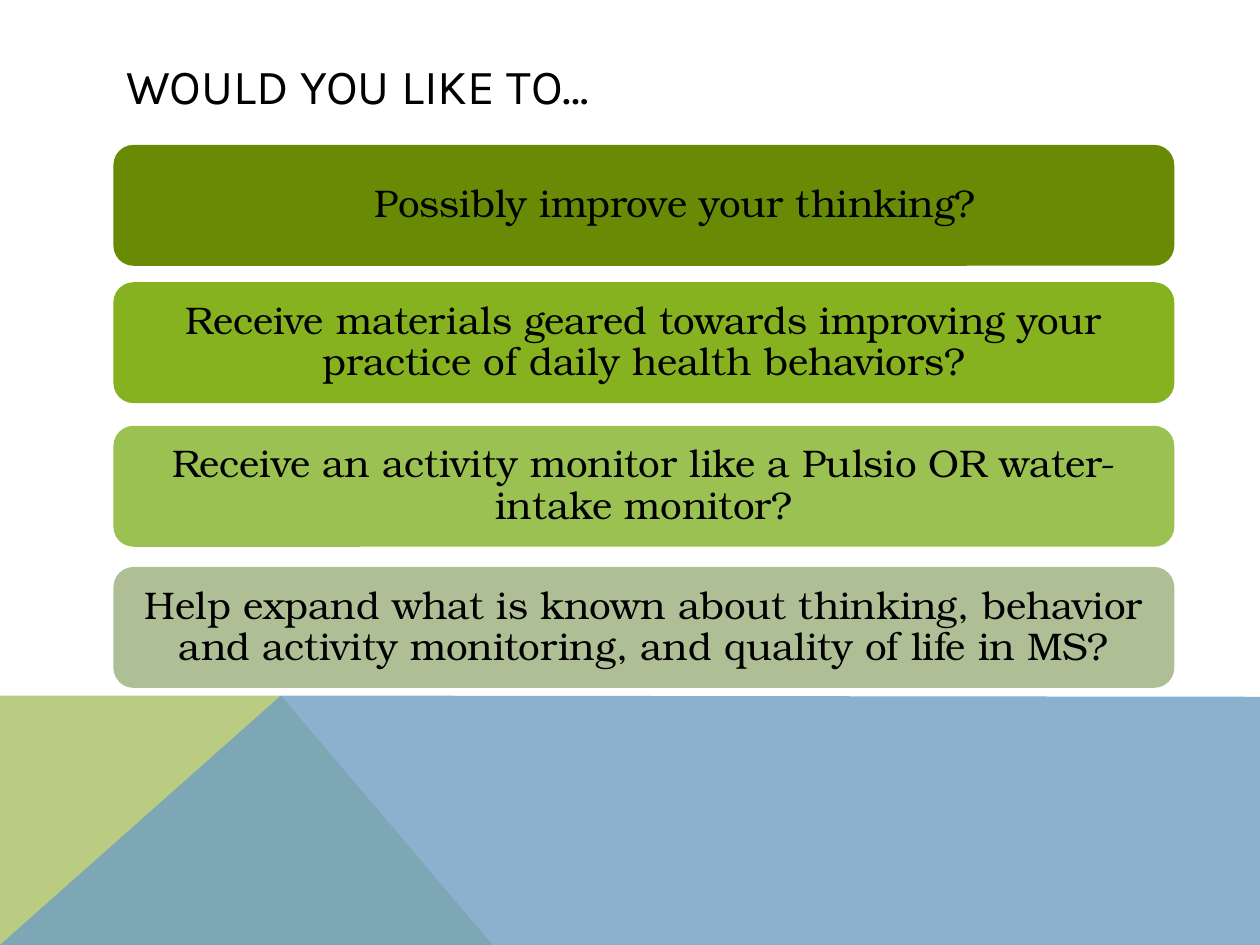
from lxml.etree import SubElement
from pptx import Presentation
from pptx.dml.color import RGBColor
from pptx.enum.shapes import MSO_SHAPE as Shape
from pptx.enum.text import MSO_ANCHOR as Anchor, PP_ALIGN as Align
from pptx.oxml.ns import qn
from pptx.util import Inches, Pt

QUESTIONS = [
    (1.15, "698A05", "\tPossibly improve your thinking?"),
    (2.24, "86B21F", "Receive materials geared towards improving your "
                     "practice of daily health behaviors?"),
    (3.38, "9AC152", "Receive an activity monitor like a Pulsio OR "
                     "water-intake monitor?"),
    (4.5, "AEBF96", "Help expand what is known about thinking, behavior "
                    "and activity monitoring, and quality of life in MS?"),
]
GREEN_BAND = [(0, 7.5), (0, 5.52), (2.23, 5.52), (3.91, 7.5)]
BLUE_BAND = [(0, 7.5), (2.23, 5.52), (10, 5.53), (10, 7.5)]


def paint(shape, color, opacity=100):
    """Give a shape a flat fill with no line or shadow."""
    shape.shadow.inherit = False
    shape.line.fill.background()
    shape.fill.solid()
    shape.fill.fore_color.rgb = RGBColor.from_string(color)
    if opacity < 100:
        swatch = shape.fill._xPr.find(qn("a:solidFill"))[0]
        SubElement(swatch, qn("a:alpha")).set("val", str(opacity * 1000))


def write(frame, text, font, size, align):
    """Write one black, vertically centred paragraph."""
    frame.word_wrap = True
    frame.vertical_anchor = Anchor.MIDDLE
    paragraph = frame.paragraphs[0]
    paragraph.alignment = align
    paragraph.line_spacing = 0.9
    run = paragraph.add_run()
    run.text = text
    run.font.name = font
    run.font.size = Pt(size)
    run.font.color.rgb = RGBColor.from_string("000000")


def add_band(slide, corners, color, opacity=100):
    """Draw one closed polygon of the footer."""
    points = [(Inches(x), Inches(y)) for x, y in corners]
    builder = slide.shapes.build_freeform(*points[0])
    builder.add_line_segments(points[1:], close=True)
    paint(builder.convert_to_shape(), color, opacity)


def add_title(slide, text):
    """Place and fill the title placeholder."""
    title = slide.shapes.title
    title.left, title.top = Inches(0.9), Inches(0.4)
    title.width, title.height = Inches(8.22), Inches(0.6)
    write(title.text_frame, text, "Karla", 28, Align.LEFT)


def add_question(slide, top, color, text):
    """Draw one rounded bar with its question."""
    bar = slide.shapes.add_shape(
        Shape.ROUNDED_RECTANGLE, Inches(0.9), Inches(top), Inches(8.42), Inches(0.96))
    paint(bar, color)
    frame = bar.text_frame
    frame.margin_left = frame.margin_right = Inches(0.09)
    frame.margin_top = frame.margin_bottom = Inches(0.09)
    write(frame, text, "TeX Gyre Bonum", 22, Align.CENTER)


def main():
    """Build the slide and save it."""
    deck = Presentation()
    deck.slide_width, deck.slide_height = Inches(10), Inches(7.5)
    slide = deck.slides.add_slide(deck.slide_layouts[5])
    add_band(slide, GREEN_BAND, "BACC82")
    add_band(slide, BLUE_BAND, "6E9EC2", 80)
    add_title(slide, "WOULD YOU LIKE TO…")
    for top, color, text in QUESTIONS:
        add_question(slide, top, color, text)
    deck.save("out.pptx")


if __name__ == "__main__":
    main()
